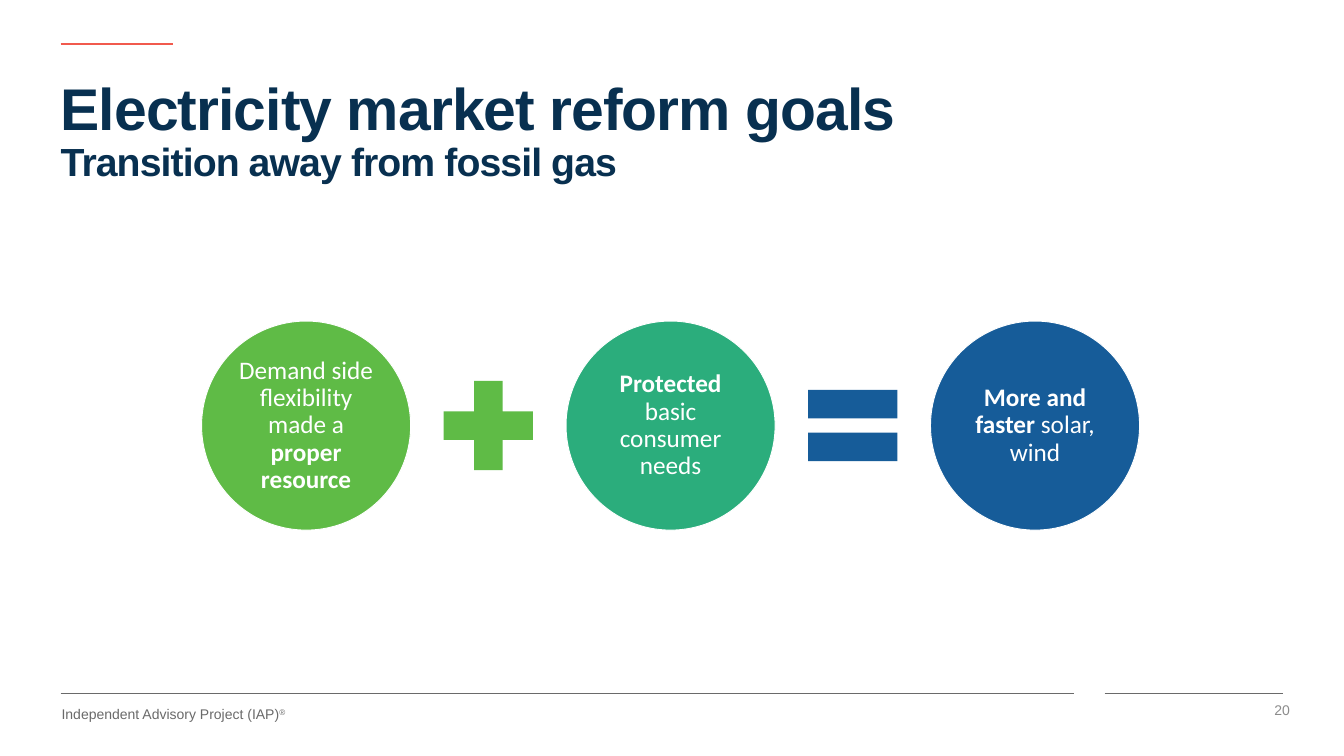
from lxml.etree import SubElement
from pptx import Presentation
from pptx.dml.color import RGBColor
from pptx.enum.shapes import MSO_CONNECTOR, MSO_SHAPE as Shape
from pptx.enum.text import MSO_ANCHOR as Anchor, PP_ALIGN as Align
from pptx.oxml.ns import qn
from pptx.util import Pt

NAVY = RGBColor(0x08, 0x30, 0x50)
GREEN = RGBColor(0x5F, 0xBB, 0x46)
TEAL = RGBColor(0x2B, 0xAD, 0x7C)
BLUE = RGBColor(0x16, 0x5C, 0x99)
CORAL = RGBColor(0xF1, 0x5A, 0x4E)
GREY = RGBColor(0x6A, 0x6A, 0x6A)
LIGHT_GREY = RGBColor(0x8C, 0x8C, 0x8C)
WHITE = RGBColor(0xFF, 0xFF, 0xFF)

# Content: each run is (text, format that differs)
TITLE = [("Electricity market reform goals", {"size": 63}),
         ("\v", {}),
         ("Transition away from fossil gas", {"size": 42})]
GOALS = [
    (GREEN, [("Demand side flexibility made a ", {}), ("proper resource", {"bold": True})]),
    (TEAL, [("Protected", {"bold": True}), (" basic consumer needs", {})]),
    (BLUE, [("More and faster ", {"bold": True}), ("solar, wind", {})]),
]
OPERATORS = [(Shape.MATH_PLUS, GREEN), (Shape.MATH_EQUAL, BLUE)]
FOOTER = [("Independent Advisory Project (IAP)", {}), ("®", {"baseline": 30})]
PAGE_NUMBER = [("20", {})]
# Rules: left, right, height on the page, colour, weight
RULES = [(65, 1150.5, 742.5, GREY, 1),
         (1183.5, 1374.5, 742.5, GREY, 1),
         (65, 185, 47.5, CORAL, 2.25)]

# Equation layout
CIRCLE, OPERATOR = 224, 130
FIRST_LEFT, PITCH, MIDDLE = 216, 390.5, 456


def write(shape, runs, size=15, color=WHITE, bold=False, font="Arial", align=Align.LEFT,
          anchor=Anchor.TOP, insets=(0, 0, 0, 0), line_spacing=1.0, tracking=0):
    frame = shape.text_frame
    frame.word_wrap = True
    frame.vertical_anchor = anchor
    (frame.margin_left, frame.margin_top,
     frame.margin_right, frame.margin_bottom) = [Pt(inset) for inset in insets]
    para = frame.paragraphs[0]
    para.alignment = align
    para.line_spacing = line_spacing
    for text, style in runs:
        if text == "\v":
            para.add_line_break()
            continue
        span = para.add_run()
        span.text = text
        span.font.name = font
        span.font.size = Pt(style.get("size", size))
        span.font.bold = style.get("bold", bold)
        span.font.color.rgb = color
        properties = span._r.get_or_add_rPr()
        if tracking:
            properties.set("spc", str(tracking * 100))
        if "baseline" in style:
            properties.set("baseline", str(style["baseline"] * 1000))


def add_rule(page, left, right, y, color, weight):
    rule = page.shapes.add_connector(MSO_CONNECTOR.STRAIGHT, Pt(left), Pt(y), Pt(right), Pt(y))
    rule.line.color.rgb = color
    rule.line.width = Pt(weight)
    SubElement(rule._element.spPr, qn("a:effectLst"))


def add_symbol(page, kind, center, size, color):
    symbol = page.shapes.add_shape(kind, Pt(center - size / 2), Pt(MIDDLE - size / 2),
                                   Pt(size), Pt(size))
    symbol.shadow.inherit = False
    symbol.fill.solid()
    symbol.fill.fore_color.rgb = color
    symbol.line.fill.background()
    return symbol


def add_label(page, left, top, width, height, runs, **style):
    box = page.shapes.add_textbox(Pt(left), Pt(top), Pt(width), Pt(height))
    write(box, runs, **style)


def main():
    deck = Presentation()
    deck.slide_width, deck.slide_height = Pt(1440), Pt(810)
    page = deck.slides.add_slide(deck.slide_layouts[5])

    # Title
    title = page.shapes.title
    title.left, title.top, title.width, title.height = Pt(65), Pt(81.5), Pt(1309.5), Pt(156)
    write(title, TITLE, color=NAVY, bold=True, insets=(0, 3.6, 7.2, 3.6),
          line_spacing=0.9, tracking=-1)

    # Rules, footer and page number
    for rule in RULES:
        add_rule(page, *rule)
    add_label(page, 66, 756, 399, 18, FOOTER, color=GREY)
    add_label(page, 1331.5, 746.5, 57, 27.5, PAGE_NUMBER, color=LIGHT_GREY,
              align=Align.RIGHT, anchor=Anchor.MIDDLE, insets=(6.5, 3, 6.5, 3))

    # Equation: circles at an equal pitch, an operator halfway between neighbours
    first_center = FIRST_LEFT + CIRCLE / 2
    for index, (color, runs) in enumerate(GOALS):
        circle = add_symbol(page, Shape.OVAL, first_center + index * PITCH, CIRCLE, color)
        circle.line.color.rgb = WHITE
        circle.line.width = Pt(1)
        write(circle, runs, size=27, font="Calibri", align=Align.CENTER,
              anchor=Anchor.MIDDLE, insets=(3, 3, 3, 3), line_spacing=0.9)
    for index, (kind, color) in enumerate(OPERATORS):
        add_symbol(page, kind, first_center + (index + 0.5) * PITCH, OPERATOR, color)

    deck.save("out.pptx")


if __name__ == "__main__":
    main()
